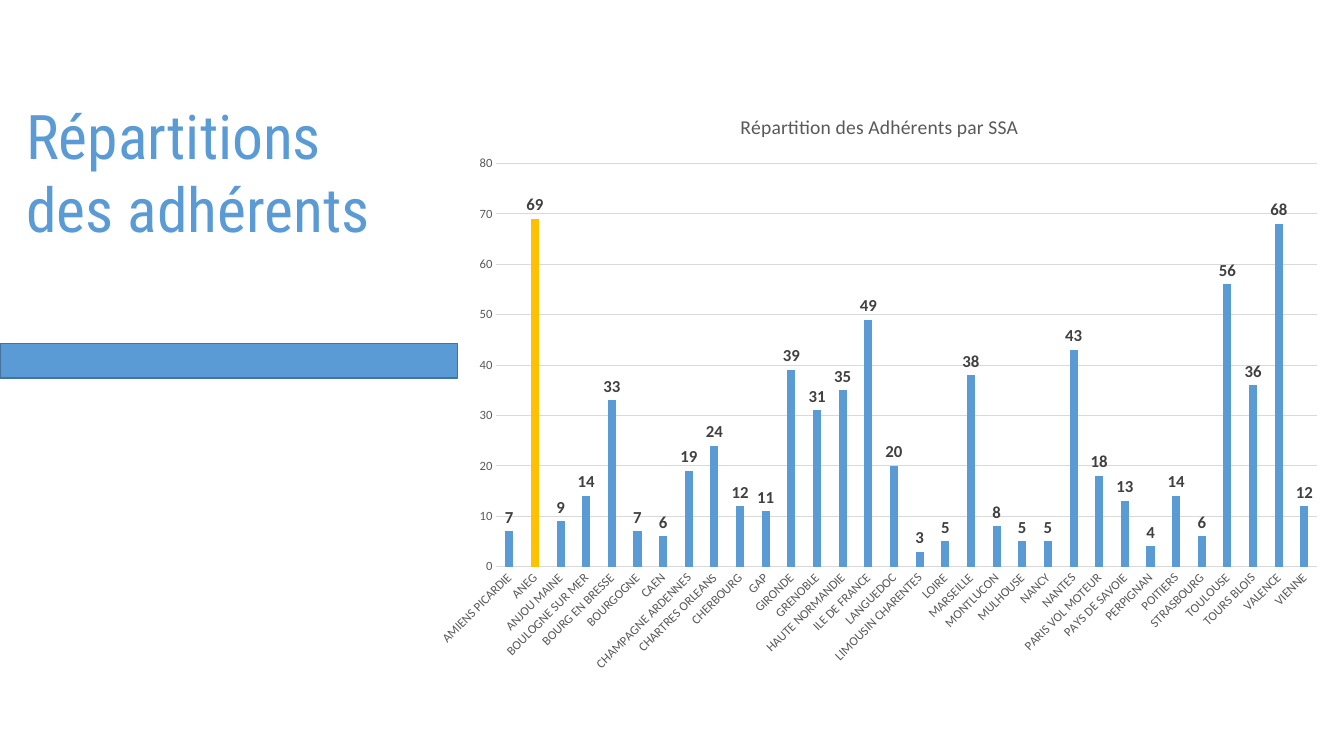
import pptx
import pptx.chart.data
import pptx.dml.color
import pptx.enum.chart
import pptx.enum.shapes
import pptx.enum.text
import pptx.oxml
import pptx.oxml.ns
import pptx.util

Pt = pptx.util.Pt
BLUE, GOLD, GREY, PALE = "5B9BD5", "FFC000", "595959", "D9D9D9"

MEMBERS = {
    "AMIENS PICARDIE": 7, "ANEG": 69, "ANJOU MAINE": 9, "BOULOGNE SUR MER": 14,
    "BOURG EN BRESSE": 33, "BOURGOGNE": 7, "CAEN": 6, "CHAMPAGNE ARDENNES": 19,
    "CHARTRES ORLEANS": 24, "CHERBOURG": 12, "GAP": 11, "GIRONDE": 39,
    "GRENOBLE": 31, "HAUTE NORMANDIE": 35, "ILE DE FRANCE": 49, "LANGUEDOC": 20,
    "LIMOUSIN CHARENTES": 3, "LOIRE": 5, "MARSEILLE": 38, "MONTLUCON": 8,
    "MULHOUSE": 5, "NANCY": 5, "NANTES": 43, "PARIS VOL MOTEUR": 18,
    "PAYS DE SAVOIE": 13, "PERPIGNAN": 4, "POITIERS": 14, "STRASBOURG": 6,
    "TOULOUSE": 56, "TOURS BLOIS": 36, "VALENCE": 68, "VIENNE": 12,
}


def rgb(value):
    return pptx.dml.color.RGBColor.from_string(value)


def apply(target, values):
    for name, value in values.items():
        setattr(target, name, value)


class SlideBuilder:
    title_font = "Roboto Condensed"
    chart_font = "Calibri"

    def __init__(self, slide):
        self.slide = slide

    def style_font(self, font, name, size, color, bold=False):
        apply(font, {"name": name, "size": Pt(size), "bold": bold})
        font.color.rgb = rgb(color)

    def style_line(self, line, color, width):
        line.color.rgb = rgb(color)
        line.width = Pt(width)

    def place(self, shape, left, top, width, height):
        apply(shape, {"left": Pt(left), "top": Pt(top),
                      "width": Pt(width), "height": Pt(height)})

    def title(self, lines, box, size, color):
        heading = self.slide.shapes.title
        self.place(heading, *box)
        frame = heading.text_frame
        frame.text = "\n".join(lines)
        apply(frame, {"word_wrap": True,
                      "auto_size": pptx.enum.text.MSO_AUTO_SIZE.NONE,
                      "vertical_anchor": pptx.enum.text.MSO_ANCHOR.TOP})
        for paragraph in frame.paragraphs:
            apply(paragraph, {"alignment": pptx.enum.text.PP_ALIGN.LEFT,
                              "line_spacing": 1.0, "space_before": Pt(0)})
            self.style_font(paragraph.runs[0].font, self.title_font, size, color)

    def bar(self, box, fill, outline):
        band = self.slide.shapes.add_shape(
            pptx.enum.shapes.MSO_SHAPE.RECTANGLE, *map(Pt, box))
        band.shadow.inherit = False
        band.fill.solid()
        band.fill.fore_color.rgb = rgb(fill)
        self.style_line(band.line, outline, 1)

    def column_chart(self, heading, values, highlight, box, plot):
        data = pptx.chart.data.CategoryChartData()
        data.categories = list(values)
        data.add_series("Series 1", list(values.values()))
        chart = self.slide.shapes.add_chart(
            pptx.enum.chart.XL_CHART_TYPE.COLUMN_CLUSTERED, *map(Pt, box), data).chart
        self.style_font(chart.font, self.chart_font, 10, "000000")
        chart.has_legend = False
        chart.has_title = True
        chart.chart_title.include_in_layout = False
        chart.chart_title.text_frame.text = heading
        heading_run = chart.chart_title.text_frame.paragraphs[0].runs[0]
        self.style_font(heading_run.font, self.chart_font, 14, GREY)

        # Columns
        columns = chart.plots[0]
        apply(columns, {"gap_width": 219, "overlap": -27,
                        "vary_by_categories": False, "has_data_labels": True})
        series = columns.series[0]
        highlighted = series.points[list(values).index(highlight)]
        for part, color in ((series, BLUE), (highlighted, GOLD)):
            part.format.fill.solid()
            part.format.fill.fore_color.rgb = rgb(color)
        labels = columns.data_labels
        apply(labels, {"show_value": True,
                       "position": pptx.enum.chart.XL_LABEL_POSITION.OUTSIDE_END})
        self.style_font(labels.font, self.chart_font, 12, "404040", bold=True)

        # Axes
        no_tick = pptx.enum.chart.XL_TICK_MARK.NONE
        for axis in (chart.category_axis, chart.value_axis):
            apply(axis, {"major_tick_mark": no_tick, "minor_tick_mark": no_tick})
            self.style_font(axis.tick_labels.font, self.chart_font, 9, GREY)
        self.style_line(chart.category_axis.format.line, PALE, 0.75)
        slant = chart.category_axis.tick_labels.font._element.getparent().getparent()
        slant.getparent().find(pptx.oxml.ns.qn("a:bodyPr")).set("rot", "-2700000")
        apply(chart.value_axis, {"minimum_scale": 0, "maximum_scale": 80,
                                 "major_unit": 10, "has_major_gridlines": True})
        chart.value_axis.format.line.fill.background()
        self.style_line(chart.value_axis.major_gridlines.format.line, PALE, 0.75)
        self.plot_area(chart, plot)

    def plot_area(self, chart, plot):
        area = chart._chartSpace.chart.plotArea
        for old in area.findall(pptx.oxml.ns.qn("c:layout")):
            area.remove(old)
        sizes = "".join(f'<c:{tag} val="{value}"/>' for tag, value in zip("xywh", plot))
        area.insert(0, pptx.oxml.parse_xml(
            f'<c:layout {pptx.oxml.ns.nsdecls("c")}><c:manualLayout>'
            '<c:layoutTarget val="inner"/><c:xMode val="edge"/><c:yMode val="edge"/>'
            f'{sizes}</c:manualLayout></c:layout>'))


def main():
    deck = pptx.Presentation()
    apply(deck, {"slide_width": Pt(960), "slide_height": Pt(540)})
    page = SlideBuilder(deck.slides.add_slide(deck.slide_layouts[5]))

    # Heading and band on the left
    page.title(["Répartitions", "des adhérents"], (11.5, 66, 342, 114), 44, BLUE)
    page.bar((0, 245.5, 327, 24.5), BLUE, "43739E")

    # Members per region
    page.column_chart("Répartition des Adhérents par SSA", MEMBERS, "ANEG",
                      (302.5, 66, 651.5, 423.5), (0.08, 0.12, 0.9, 0.68))
    deck.save("out.pptx")


if __name__ == "__main__":
    main()
